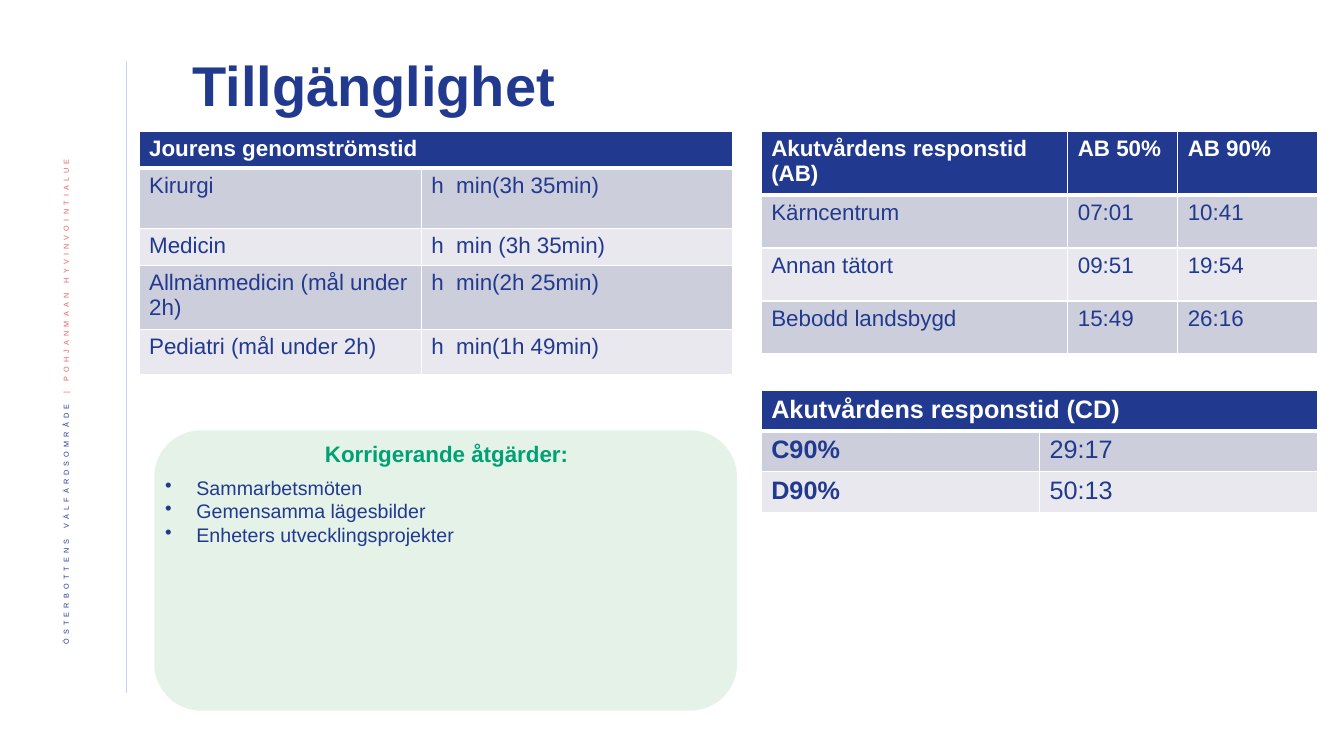
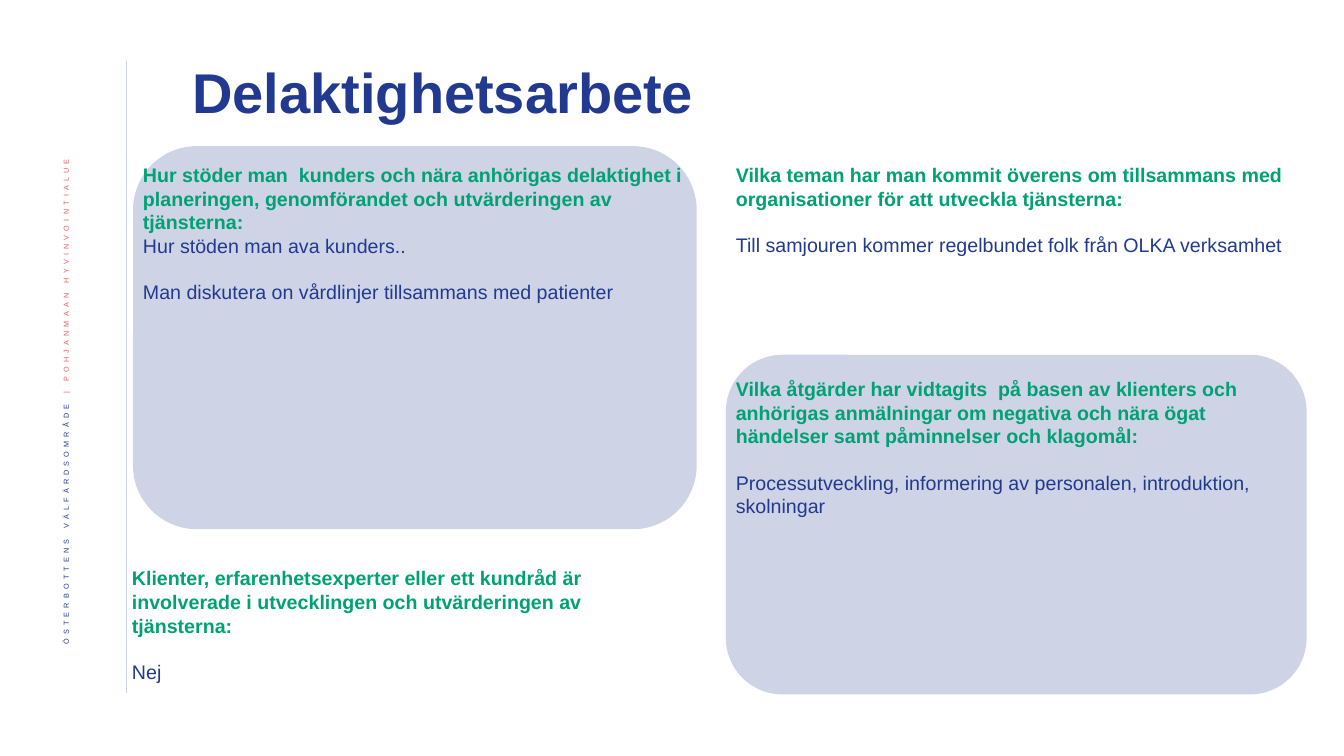
"""Build two slides on the availability of care and on participation work."""
from dataclasses import dataclass

from lxml import etree
from pptx import Presentation
from pptx import util as u
from pptx.dml.color import RGBColor
from pptx.enum import shapes, text
from pptx.oxml.ns import qn


@dataclass(frozen=True)
class Theme:
    font: str = "Arial"
    navy: str = "213A8F"
    green: str = "00A174"
    mint: str = "85C598"
    coral: str = "EB5C5F"
    rule: str = "C9D2F2"
    white: str = "FFFFFF"
    bands: tuple = ("CDCEDB", "E8E8EE")
    card_alpha: int = 22
    title: int = 40
    large: int = 18
    medium: int = 16
    body: int = 14
    small: int = 9
    blank_line: float = 16.5


theme = Theme()
deck = Presentation()
deck.slide_width, deck.slide_height = u.Inches(13.33), u.Inches(7.5)


def at(*shares):
    """Turn percentages of the slide's width and height, in turn, into lengths."""
    sides = (deck.slide_width, deck.slide_height)
    return [u.Emu(round(share * sides[i % 2] / 100)) for i, share in enumerate(shares)]


def style(paragraph, size, color, bold=False):
    """Format every run of a paragraph."""
    for run in paragraph.runs:
        run.font.name = theme.font
        run.font.size = u.Pt(size)
        run.font.bold = bold
        run.font.color.rgb = RGBColor.from_string(color)


titles = [
    ("Tillgänglighet", (13.58, 6, 82.37, 11.33)),
    ("Delaktighetsarbete", (13.58, 6, 74.87, 13.2)),
]
pages = []
for heading, area in titles:
    page = deck.slides.add_slide(deck.slide_layouts[6])
    pages.append(page)

    margin = page.shapes.add_connector(
        shapes.MSO_CONNECTOR.STRAIGHT, *at(9.38, 8.13, 9.38, 91.73))
    margin.line.color.rgb = RGBColor.from_string(theme.rule)
    margin.line.width = u.Pt(0.5)
    etree.SubElement(margin._element.spPr, qn("a:effectLst"))

    organisation = page.shapes.add_textbox(*at(3.15, 18.93, 3.9, 76.4)).text_frame
    organisation.word_wrap = True
    organisation.vertical_anchor = text.MSO_ANCHOR.MIDDLE
    organisation._txBody.bodyPr.set("vert", "vert270")
    names = organisation.paragraphs[0]
    names.alignment = text.PP_ALIGN.RIGHT
    names.line_spacing = 0.9
    for name in ("ÖSTERBOTTENS VÄLFÄRDSOMRÅDE ", "| POHJANMAAN HYVINVOINTIALUE "):
        names.add_run().text = name
    style(names, theme.small, theme.navy)
    names.runs[1].font.color.rgb = RGBColor.from_string(theme.coral)
    for run in names.runs:
        run.font._element.set("baseline", "30000")
        run.font._element.set("spc", "300")

    title = page.shapes.add_textbox(*at(*area)).text_frame
    title.word_wrap = True
    title.vertical_anchor = text.MSO_ANCHOR.MIDDLE
    title.text = heading
    title.paragraphs[0].line_spacing = 0.9
    style(title.paragraphs[0], theme.title, theme.navy, True)

availability, participation = pages

cards = [
    (availability, theme.mint, (11.48, 56.93, 43.36, 37.07)),
    (participation, theme.navy, (9.9, 19.33, 41.94, 50.67)),
    (participation, theme.navy, (54.01, 46.93, 43.21, 44.93)),
]
for page, color, area in cards:
    card = page.shapes.add_shape(shapes.MSO_SHAPE.ROUNDED_RECTANGLE, *at(*area))
    card.shadow.inherit = False
    card.line.fill.background()
    card.fill.solid()
    card.fill.fore_color.rgb = RGBColor.from_string(color)
    tint = card._element.spPr.find(qn("a:solidFill"))[0]
    etree.SubElement(tint, qn("a:alpha"), val=str(theme.card_alpha * 1000))

tables = [
    ((10.35, 17.33), (21, 23.18), (4.4, 8, 4.67, 7.87, 6), theme.medium, False, [
        ("Jourens genomströmstid", None),
        ("Kirurgi", "h  min(3h 35min)"),
        ("Medicin", "h  min (3h 35min)"),
        ("Allmänmedicin (mål under 2h)", "h  min(2h 25min)"),
        ("Pediatri (mål under 2h)", "h  min(1h 49min)"),
    ]),
    ((56.64, 17.33), (22.81, 8.18, 10.43), (7.8, 7.02, 7.02, 7.02), theme.medium, False, [
        ("Akutvårdens responstid (AB)", "AB 50%", "AB 90%"),
        ("Kärncentrum", "07:01", "10:41"),
        ("Annan tätort", "09:51", "19:54"),
        ("Bebodd landsbygd", "15:49", "26:16"),
    ]),
    ((56.64, 51.6), (20.7, 20.7), (5.4, 5.4, 5.4), theme.large, True, [
        ("Akutvårdens responstid (CD)", None),
        ("C90%", "29:17"),
        ("D90%", "50:13"),
    ]),
]
for corner, widths, heights, size, bold_labels, rows in tables:
    table = availability.shapes.add_table(
        len(rows), len(widths), *at(*corner, sum(widths), sum(heights))).table
    for column, share in zip(table.columns, widths):
        column.width = at(share)[0]
    for row, share in zip(table.rows, heights):
        row.height = at(0, share)[1]
    if rows[0][1] is None:
        table.cell(0, 0).merge(table.cell(0, len(widths) - 1))
    for r, values in enumerate(rows):
        for c, value in enumerate(values):
            cell = table.cell(r, c)
            header = r == 0
            cell.fill.solid()
            cell.fill.fore_color.rgb = RGBColor.from_string(
                theme.navy if header else theme.bands[(r - 1) % 2])
            if value:
                cell.text_frame.text = value
                style(cell.text_frame.paragraphs[0], size,
                      theme.white if header else theme.navy,
                      header or (bold_labels and c == 0))
            thick = {0: "lnB", 1: "lnT"}.get(r)
            for place, side in enumerate(("lnL", "lnR", "lnT", "lnB")):
                border = etree.Element(
                    qn(f"a:{side}"), w=str(u.Pt(3 if side == thick else 1)))
                paint = etree.SubElement(border, qn("a:solidFill"))
                etree.SubElement(paint, qn("a:srgbClr"), val=theme.white)
                cell._tc.get_or_add_tcPr().insert(place, border)

actions = availability.shapes.add_textbox(*at(11.55, 57.6, 43.36, 22.67)).text_frame
actions.word_wrap = True
actions.text = "Korrigerande åtgärder:"
lead = actions.paragraphs[0]
lead.alignment = text.PP_ALIGN.CENTER
lead.space_after = u.Pt(6)
style(lead, theme.medium, theme.green, True)
for action in ("Sammarbetsmöten", "Gemensamma lägesbilder", "Enheters utvecklingsprojekter"):
    item = actions.add_paragraph()
    item.text = action
    properties = item._p.get_or_add_pPr()
    properties.set("marL", str(u.Inches(0.31)))
    properties.set("indent", str(u.Inches(-0.31)))
    etree.SubElement(properties, qn("a:buChar"), char="•")
    style(item, theme.body, theme.navy)

questions = [
    ((9.9, 20.93, 41.94, 23.33),
     "Hur stöder man  kunders och nära anhörigas delaktighet i planeringen, "
     "genomförandet och utvärderingen av tjänsterna:",
     [("Hur stöden man ava kunders..", 0),
      ("Man diskutera on vårdlinjer tillsammans med patienter", theme.blank_line)]),
    ((54.01, 20.93, 43.21, 17.07),
     "Vilka teman har man kommit överens om tillsammans med organisationer "
     "för att utveckla tjänsterna:",
     [("Till samjouren kommer regelbundet folk från OLKA verksamhet", theme.blank_line)]),
    ((9.08, 74.27, 41.94, 17.07),
     "Klienter, erfarenhetsexperter eller ett kundråd är involverade i "
     "utvecklingen och utvärderingen av tjänsterna:",
     [("Nej", theme.blank_line)]),
    ((54.01, 49.2, 43.21, 23.33),
     "Vilka åtgärder har vidtagits  på basen av klienters och anhörigas "
     "anmälningar om negativa och nära ögat händelser samt påminnelser och klagomål:",
     [("Processutveckling, informering av personalen, introduktion, skolningar",
       theme.blank_line)]),
]
for area, question, answers in questions:
    topic = participation.shapes.add_textbox(*at(*area)).text_frame
    topic.word_wrap = True
    topic.text = question
    style(topic.paragraphs[0], theme.body, theme.green, True)
    for answer, gap in answers:
        reply = topic.add_paragraph()
        reply.text = answer
        reply.space_before = u.Pt(gap)
        style(reply, theme.body, theme.navy)

deck.save("out.pptx")
